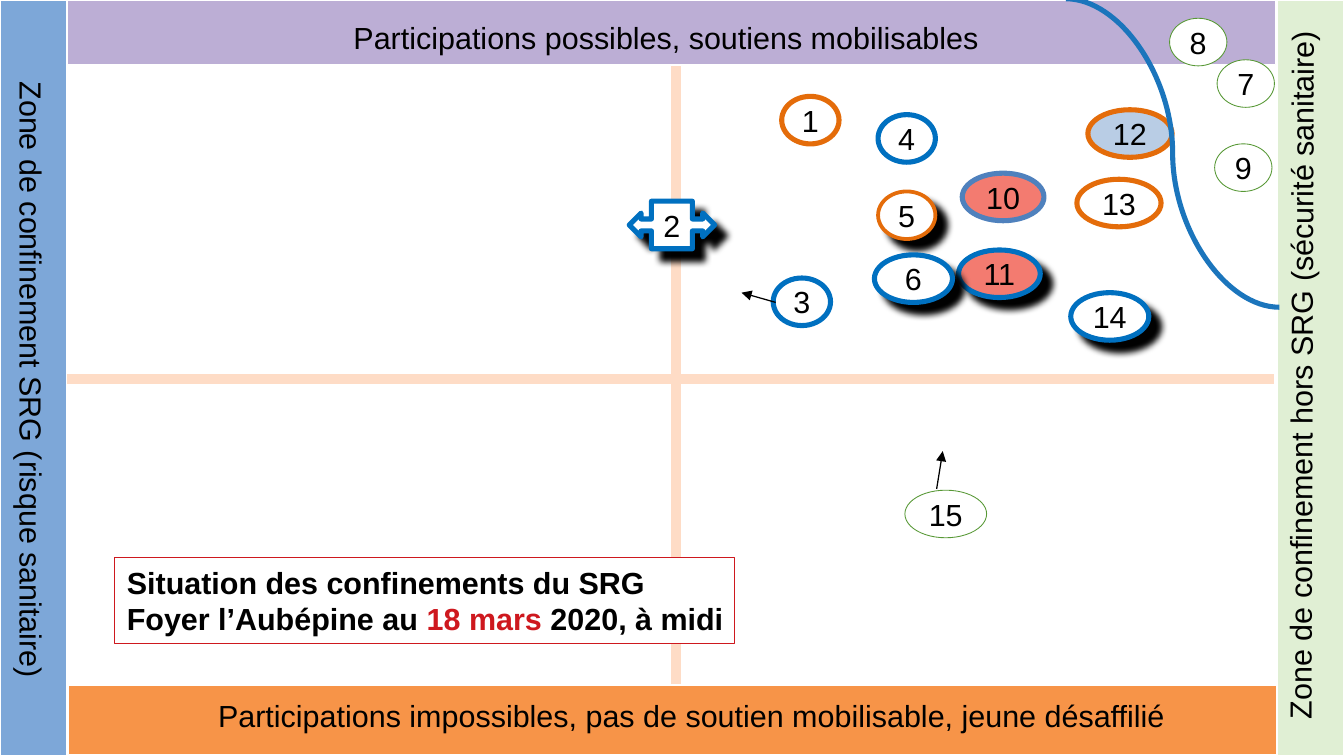
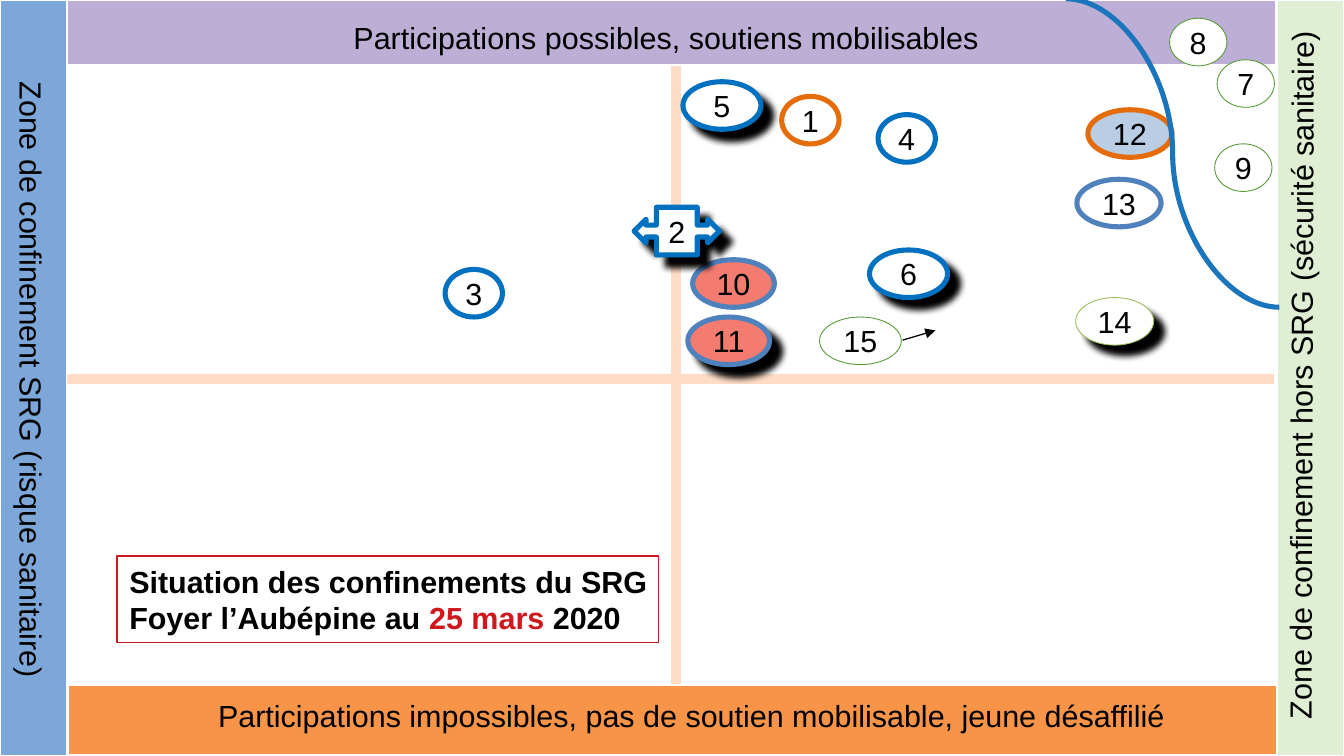
from dataclasses import dataclass

from lxml.etree import SubElement
from pptx import Presentation
from pptx.dml.color import RGBColor
from pptx.enum.shapes import MSO_CONNECTOR as CONNECTOR, MSO_SHAPE as SHAPE
from pptx.enum.text import MSO_ANCHOR as ANCHOR, MSO_AUTO_SIZE as AUTO_SIZE, PP_ALIGN as ALIGN
from pptx.oxml import parse_xml
from pptx.oxml.ns import nsdecls, qn
from pptx.presentation import Presentation as Deck
from pptx.shapes.autoshape import Shape
from pptx.slide import Slide
from pptx.text.text import _Run as Run
from pptx.util import Inches, Pt

BLACK = RGBColor(0x00, 0x00, 0x00)
WHITE = RGBColor(0xFF, 0xFF, 0xFF)
RED = RGBColor(0xCE, 0x18, 0x1E)
BAND_ORANGE = RGBColor(0xF7, 0x94, 0x48)
BAND_PURPLE = RGBColor(0xBC, 0xAE, 0xD5)
BAND_BLUE = RGBColor(0x7D, 0xA7, 0xD8)
BAND_GREEN = RGBColor(0xE0, 0xEF, 0xD4)
AXIS = RGBColor(0xFE, 0xDC, 0xC6)
CURVE = RGBColor(0x1B, 0x75, 0xBC)
BLUE = RGBColor(0x00, 0x70, 0xC0)
STEEL = RGBColor(0x4F, 0x81, 0xBD)
ORANGE = RGBColor(0xE4, 0x6C, 0x0A)
GREEN = RGBColor(0x57, 0x98, 0x35)
LIME = RGBColor(0x9B, 0xBB, 0x59)
CORAL = RGBColor(0xF3, 0x7B, 0x70)
PALE_BLUE = RGBColor(0xB9, 0xCD, 0xE5)

FONT = "Arial"
TEXT_SIZE = 18
SLIDE_W, SLIDE_H = 11.02, 6.2
SIDE_W = 0.55
TOKEN_H = 0.39
SMALL, MEDIUM, LARGE, WIDE = 0.47, 0.64, 0.67, 0.69
THIN = 0.5


@dataclass(frozen=True)
class Band:
    x: float
    y: float
    w: float
    h: float
    fill: RGBColor


@dataclass(frozen=True)
class Label:
    text: str
    x: float
    y: float
    w: float
    h: float = 0.37
    rotation: float = 0


@dataclass(frozen=True)
class Token:
    number: int
    x: float
    y: float
    w: float
    line: RGBColor
    fill: RGBColor = WHITE
    weight: float = 3
    shadow: bool = False
    shape: SHAPE = SHAPE.OVAL


@dataclass(frozen=True)
class Segment:
    x1: float
    y1: float
    x2: float
    y2: float
    color: RGBColor = BLACK
    weight: float = 0.75
    kind: CONNECTOR = CONNECTOR.STRAIGHT
    arrow: bool = False


@dataclass(frozen=True)
class Situation:
    date: str
    ending: str
    x: float
    y: float
    w: float
    tokens: tuple[Token, ...]
    arrows: tuple[Segment, ...]


BANDS = (
    Band(0.56, 5.62, 9.91, 0.57, BAND_ORANGE),
    Band(0.55, 0, 9.91, 0.53, BAND_PURPLE),
    Band(0, 0, SIDE_W, SLIDE_H, BAND_BLUE),
    Band(SLIDE_W - SIDE_W, 0, SIDE_W, SLIDE_H, BAND_GREEN),
)
LABELS = (
    Label("Zone de confinement SRG (risque sanitaire)", -2.36, 3.02, 5.27, rotation=90),
    Label("Participations impossibles, pas de soutien mobilisable, jeune désaffilié", 1.69, 5.67, 8.03),
    Label("Zone de confinement hors SRG (sécurité sanitaire)", 7.75, 2.81, 5.9, 0.47, 270.2),
    Label("Participations possibles, soutiens mobilisables", 2.8, 0.11, 5.35),
)
AXES = (
    Segment(5.54, 5.61, 5.54, 0.54, AXIS, 6),
    Segment(0.55, 3.11, 10.45, 3.11, AXIS, 6),
)
BOUNDARY = Segment(8.74, -0.01, 10.49, 2.52, CURVE, 3, CONNECTOR.CURVE)

UNMOVED = (
    Token(1, 6.41, 0.79, SMALL, ORANGE),
    Token(4, 7.2, 0.94, SMALL, BLUE),
    Token(12, 8.92, 0.9, WIDE, ORANGE, PALE_BLUE),
    Token(7, 9.98, 0.49, SMALL, GREEN, weight=THIN),
    Token(8, 9.59, 0.15, SMALL, GREEN, weight=THIN),
    Token(9, 9.96, 1.18, SMALL, GREEN, weight=THIN),
)
SITUATIONS = (
    Situation(
        "18 mars", " 2020, à midi", 0.94, 4.57, 5.08,
        (
            Token(2, 5.16, 1.65, 0.7, BLUE, shadow=True, shape=SHAPE.LEFT_RIGHT_ARROW_CALLOUT),
            Token(3, 6.34, 2.28, SMALL, BLUE),
            Token(5, 7.2, 1.57, SMALL, ORANGE, weight=2.25, shadow=True),
            Token(10, 7.89, 1.42, LARGE, STEEL, CORAL),
            Token(11, 7.86, 2.05, LARGE, BLUE, CORAL, shadow=True),
            Token(15, 7.42, 4.02, LARGE, GREEN, weight=THIN),
            Token(13, 8.83, 1.47, WIDE, ORANGE),
            Token(14, 8.78, 2.4, MEDIUM, BLUE, shadow=True),
            Token(6, 7.17, 2.09, MEDIUM, BLUE, shadow=True),
        ),
        (
            Segment(7.68, 4.01, 7.73, 3.7, arrow=True),
            Segment(6.36, 2.48, 6.08, 2.4, arrow=True),
        ),
    ),
    Situation(
        "25 mars", " 2020", 0.96, 4.56, 4.44,
        (
            Token(5, 5.6, 0.67, MEDIUM, BLUE, shadow=True),
            Token(3, 3.65, 2.21, SMALL, BLUE),
            Token(10, 5.68, 2.13, LARGE, STEEL, CORAL),
            Token(11, 5.64, 2.6, LARGE, STEEL, CORAL, shadow=True),
            Token(15, 6.72, 2.6, LARGE, GREEN, weight=THIN),
            Token(13, 8.83, 1.47, WIDE, STEEL),
            Token(6, 7.13, 2.05, MEDIUM, BLUE, shadow=True),
            Token(2, 5.2, 1.7, 0.7, BLUE, shadow=True, shape=SHAPE.LEFT_RIGHT_ARROW_CALLOUT),
            Token(14, 8.82, 2.44, MEDIUM, LIME, weight=THIN, shadow=True),
        ),
        (Segment(7.4, 2.79, 7.67, 2.71, arrow=True),),
    ),
)


def format_run(r: Run, color: RGBColor = BLACK, bold: bool = False) -> None:
    r.font.name = FONT
    r.font.size = Pt(TEXT_SIZE)
    r.font.bold = bold
    r.font.color.rgb = color


def paint(sp: Shape, fill: RGBColor, line: RGBColor, weight: float) -> None:
    sp.fill.solid()
    sp.fill.fore_color.rgb = fill
    sp.line.color.rgb = line
    sp.line.width = Pt(weight)


def add_shape(s: Slide, kind: SHAPE, x: float, y: float, w: float, h: float) -> Shape:
    sp = s.shapes.add_shape(kind, Inches(x), Inches(y), Inches(w), Inches(h))
    sp.shadow.inherit = False
    return sp


def cast_shadow(sp: Shape) -> None:
    effects = sp.element.spPr.find(qn("a:effectLst"))
    effects.append(parse_xml(
        f'<a:outerShdw {nsdecls("a")} blurRad="{Pt(4)}" dist="{Pt(8.5)}" dir="2700000" '
        'algn="tl" rotWithShape="0"><a:srgbClr val="000000"/></a:outerShdw>'
    ))


def draw_band(s: Slide, band: Band) -> None:
    sp = add_shape(s, SHAPE.RECTANGLE, band.x, band.y, band.w, band.h)
    paint(sp, band.fill, WHITE, 0.75)


def draw_label(s: Slide, label: Label) -> None:
    sp = s.shapes.add_textbox(Inches(label.x), Inches(label.y), Inches(label.w), Inches(label.h))
    sp.rotation = label.rotation
    tf = sp.text_frame
    tf.word_wrap = True
    tf.text = label.text
    format_run(tf.paragraphs[0].runs[0])


def draw_segment(s: Slide, seg: Segment) -> None:
    sp = s.shapes.add_connector(
        seg.kind, Inches(seg.x1), Inches(seg.y1), Inches(seg.x2), Inches(seg.y2)
    )
    sp.line.color.rgb = seg.color
    sp.line.width = Pt(seg.weight)
    if seg.arrow:
        SubElement(sp.element.spPr.find(qn("a:ln")), qn("a:tailEnd"), type="triangle")
    SubElement(sp.element.spPr, qn("a:effectLst"))


def draw_token(s: Slide, token: Token) -> None:
    sp = add_shape(s, token.shape, token.x, token.y, token.w, TOKEN_H)
    if token.shape == SHAPE.LEFT_RIGHT_ARROW_CALLOUT:
        for i, value in enumerate((0.25, 0.25, 0.25, 0.48)):
            sp.adjustments[i] = value
    paint(sp, token.fill, token.line, token.weight)
    if token.shadow:
        cast_shadow(sp)
    tf = sp.text_frame
    tf.word_wrap = False
    tf.vertical_anchor = ANCHOR.MIDDLE
    tf.text = str(token.number)
    p = tf.paragraphs[0]
    p.alignment = ALIGN.CENTER
    format_run(p.runs[0])


def draw_title(s: Slide, situation: Situation) -> None:
    sp = s.shapes.title
    sp.left, sp.top = Inches(situation.x), Inches(situation.y)
    sp.width, sp.height = Inches(situation.w), Inches(0.71)
    paint(sp, WHITE, RED, 0.75)
    tf = sp.text_frame
    tf.auto_size = AUTO_SIZE.NONE
    tf.word_wrap = True
    tf.margin_left, tf.margin_right = Inches(0.1), Inches(0)
    tf.vertical_anchor = ANCHOR.MIDDLE
    tf.text = "Situation des confinements du SRG"
    format_run(tf.paragraphs[0].runs[0], bold=True)
    p = tf.add_paragraph()
    for text, color in (("Foyer l’Aubépine au ", BLACK), (situation.date, RED), (situation.ending, BLACK)):
        r = p.add_run()
        r.text = text
        format_run(r, color, bold=True)
    for p in tf.paragraphs:
        p.alignment = ALIGN.LEFT
    s.shapes.element.append(sp.element)


def draw_backdrop(s: Slide) -> None:
    for band in BANDS:
        draw_band(s, band)
    for label in LABELS:
        draw_label(s, label)
    for axis in AXES:
        draw_segment(s, axis)


def build_slide(prs: Deck, situation: Situation) -> None:
    s = prs.slides.add_slide(prs.slide_layouts[5])
    draw_backdrop(s)
    draw_title(s, situation)
    for token in UNMOVED + situation.tokens:
        draw_token(s, token)
    for seg in (BOUNDARY, *situation.arrows):
        draw_segment(s, seg)


def main() -> None:
    prs = Presentation()
    prs.slide_width, prs.slide_height = Inches(SLIDE_W), Inches(SLIDE_H)
    for situation in SITUATIONS:
        build_slide(prs, situation)
    prs.save("out.pptx")


if __name__ == "__main__":
    main()
